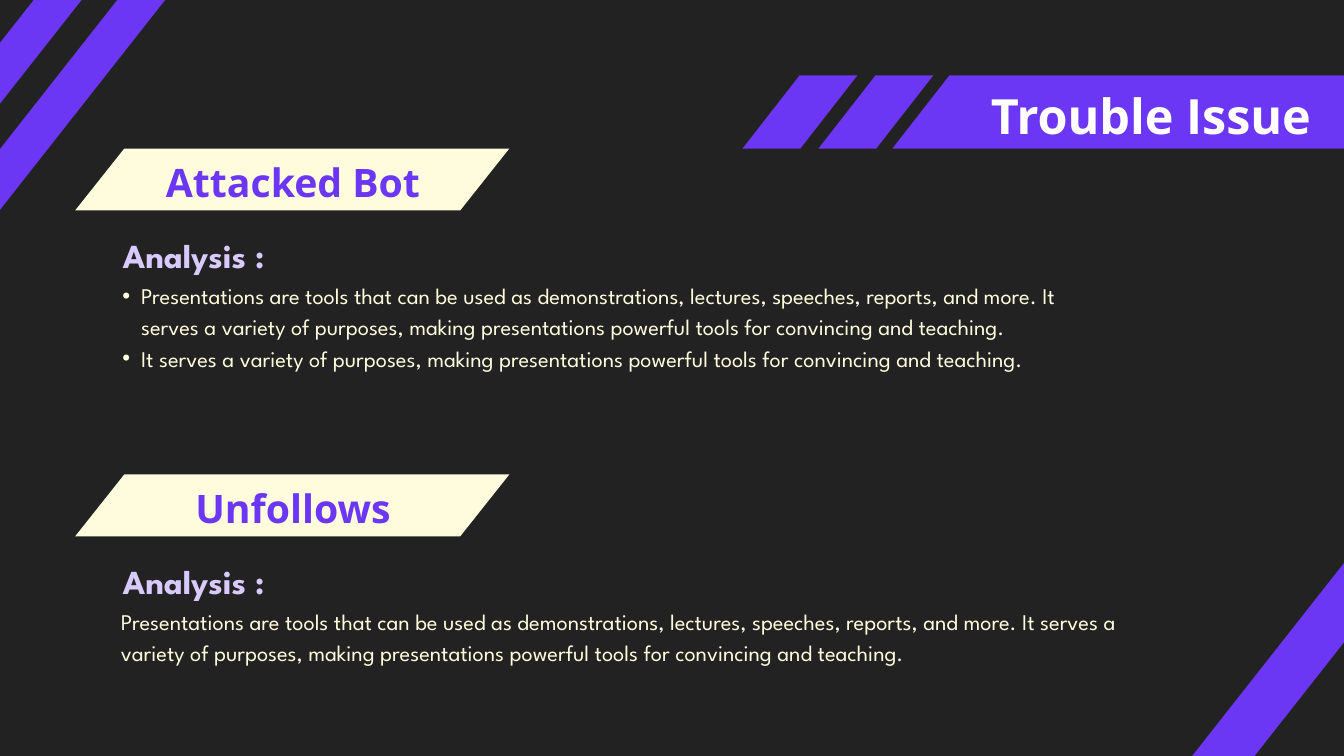
"""Build the Trouble Issue slide with two analysis sections."""
from pptx import Presentation
from pptx.dml.color import RGBColor
from pptx.enum.shapes import MSO_SHAPE
from pptx.enum.text import MSO_ANCHOR, MSO_AUTO_SIZE, PP_ALIGN
from pptx.oxml.ns import qn
from pptx.util import Inches, Pt
from lxml.etree import SubElement

DARK = RGBColor(0x22, 0x22, 0x22)
PURPLE = RGBColor(0x6B, 0x37, 0xF4)
LILAC = RGBColor(0xD8, 0xCA, 0xFC)
CREAM = RGBColor(0xFF, 0xFC, 0xDD)
WHITE = RGBColor(0xFF, 0xFF, 0xFF)

WIDE, HIGH = 20, 11.25
TITLE = "Trouble Issue"
LABEL = "Analysis :"
SERVES = ("serves a variety of purposes, making presentations powerful tools "
          "for convincing and teaching.")
TOOLS = ("Presentations are tools that can be used as demonstrations, lectures, "
         "speeches, reports, and more. It " + SERVES)
PARTS = [
    {"head": "Attacked Bot", "top": 2.21, "body": [TOOLS, "It " + SERVES],
     "left": 1.53, "high": 2.27, "bullet": True},
    {"head": "Unfollows", "top": 7.06, "body": [TOOLS],
     "left": 1.8, "high": 0.89, "bullet": False},
]
TILT, LENGTH = 38.2, 7.17
STRIPES = [(0.85, -2.35, 0.56), (0, -2.85, 0.56), (19.15, 6, 0.73)]
BAR_TOP, BAR_HIGH, BAR_LEAN = 1.12, 1.09, 0.85
BARS = [(12.18, 1.71), (11.05, 1.71), (13.28, 11.16)]

FORMS = {
    "title": {"name": "Open Sans", "size": Pt(52), "bold": True, "color": WHITE},
    "head": {"name": "Open Sans", "size": Pt(42), "bold": True, "color": PURPLE},
    "label": {"name": "League Spartan", "size": Pt(36), "bold": True, "color": LILAC},
    "body": {"name": "League Spartan", "size": Pt(24), "bold": False, "color": CREAM},
}


def paint(shape, color):
    shape.shadow.inherit = False
    shape.fill.solid()
    shape.fill.fore_color.rgb = color
    shape.line.fill.background()


def slant(slide, left, top, wide, high, lean, color):
    right, base = left + wide, top + high
    points = [(left + lean, top), (right, top), (right - lean, base), (left, base)]
    dots = [(Inches(x), Inches(y)) for x, y in points]
    pen = slide.shapes.build_freeform(*dots[0])
    pen.add_line_segments(dots[1:], close=True)
    paint(pen.convert_to_shape(), color)


def add_stripe(slide, left, top, wide):
    box = map(Inches, (left, top, wide, LENGTH))
    stripe = slide.shapes.add_shape(MSO_SHAPE.RECTANGLE, *box)
    stripe.rotation = TILT
    paint(stripe, PURPLE)


def add_dot(para):
    props = para._p.get_or_add_pPr()
    props.set("marL", str(Inches(0.57)))
    props.set("indent", str(Inches(-0.28)))
    SubElement(props, qn("a:buFont")).set("typeface", "Arial")
    SubElement(props, qn("a:buChar")).set("char", "•")


def write(shape, lines, form, align=PP_ALIGN.LEFT, bullet=False):
    frame = shape.text_frame
    setup = {"word_wrap": True, "auto_size": MSO_AUTO_SIZE.NONE,
             "vertical_anchor": MSO_ANCHOR.TOP, "margin_left": 0,
             "margin_right": 0, "margin_top": 0, "margin_bottom": 0}
    for key, value in setup.items():
        setattr(frame, key, value)
    frame.text = "\n".join(lines)
    for para in frame.paragraphs:
        para.alignment = align
        para.line_spacing = Pt(round(FORMS[form]["size"].pt * 1.4, 1))
        if bullet:
            add_dot(para)
        font = para.runs[0].font
        for key, value in FORMS[form].items():
            if key == "color":
                font.color.rgb = value
            else:
                setattr(font, key, value)


def add_text(slide, box, lines, form, **rest):
    shape = slide.shapes.add_textbox(*map(Inches, box))
    write(shape, lines, form, **rest)


def add_part(slide, part):
    top = part["top"]
    slant(slide, 1.12, top, 6.46, 0.92, 0.73, CREAM)
    add_text(slide, (1.85, top + 0.03, 5.02, 0.78), [part["head"]], "head",
             align=PP_ALIGN.CENTER)
    add_text(slide, (1.83, top + 1.18, 2.9, 0.67), [LABEL], "label")
    add_text(slide, (part["left"], top + 1.92, 14.89, part["high"]),
             part["body"], "body", bullet=part["bullet"])


def add_title(slide):
    title = slide.shapes.title
    slide.shapes._spTree.append(title._element)
    place = {"left": 13.85, "top": 1.13, "width": 5.66, "height": 0.97}
    for key, value in place.items():
        setattr(title, key, Inches(value))
    write(title, [TITLE], "title", align=PP_ALIGN.RIGHT)


def main():
    deck = Presentation()
    deck.slide_width, deck.slide_height = Inches(WIDE), Inches(HIGH)
    slide = deck.slides.add_slide(deck.slide_layouts[5])
    slide.background.fill.solid()
    slide.background.fill.fore_color.rgb = DARK
    for left, wide in BARS:
        slant(slide, left, BAR_TOP, wide, BAR_HIGH, BAR_LEAN, PURPLE)
    add_title(slide)
    for part in PARTS:
        add_part(slide, part)
    for stripe in STRIPES:
        add_stripe(slide, *stripe)
    deck.save("out.pptx")


if __name__ == "__main__":
    main()
